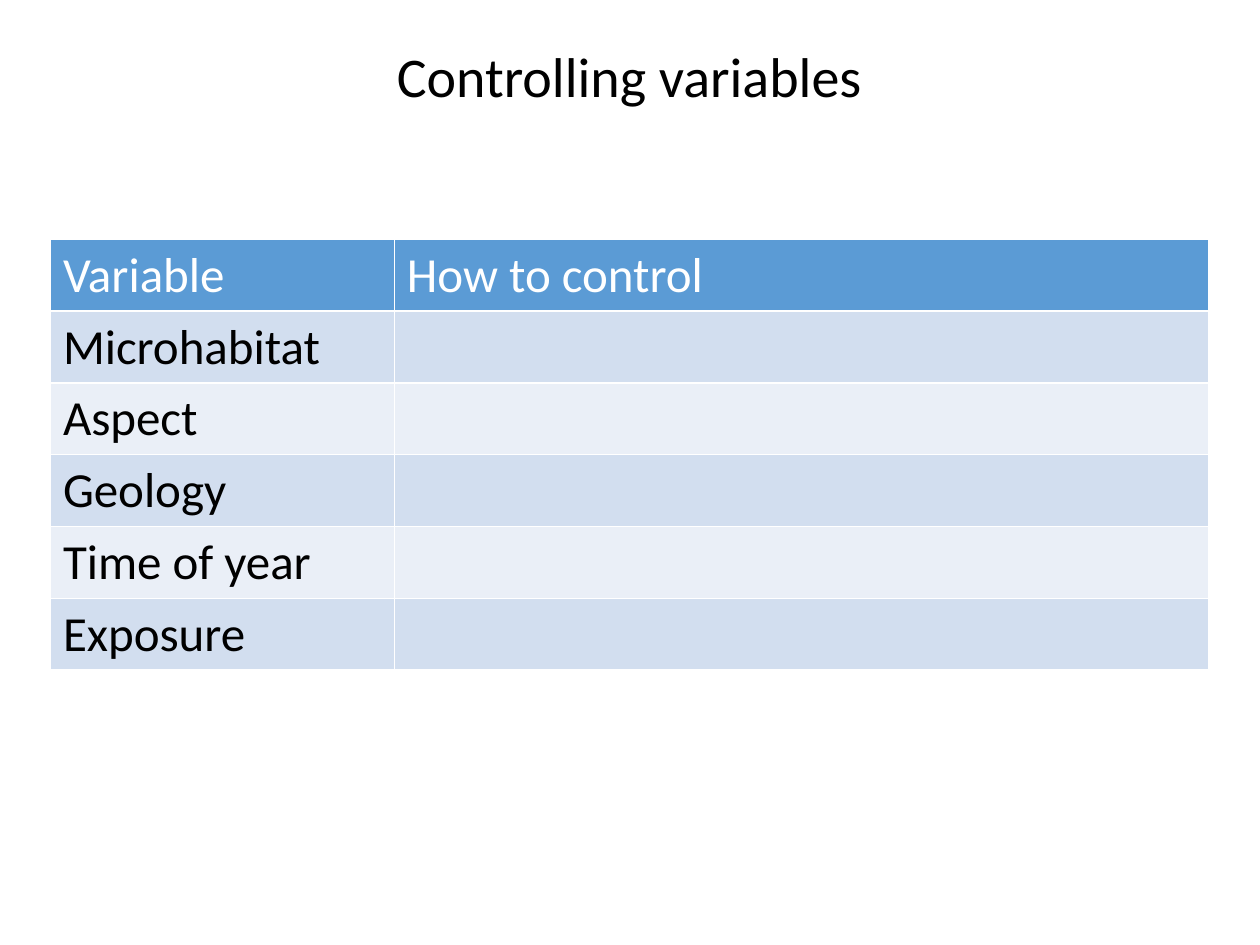
from pptx import Presentation
from pptx.dml.color import RGBColor
from pptx.enum.text import MSO_AUTO_SIZE, PP_ALIGN
from pptx.util import Inches, Pt

FONT = "Calibri"
BLACK, WHITE = "000000", "FFFFFF"
HEADER_FILL = "5B9BD5"
BAND_FILLS = ("D2DEEF", "EAEFF7")
LEFT, WIDTH = 0.4, 9.19
COLUMN_WIDTHS = (2.73, 6.46)
ROW_HEIGHT = 0.57
HEADINGS = ("Variable", "How to control")
VARIABLES = ("Microhabitat", "Aspect", "Geology", "Time of year", "Exposure")


def colour(value):
    return RGBColor.from_string(value)


def add_span(para, text, size, text_colour):
    span = para.add_run()
    span.text = text
    span.font.name = FONT
    span.font.size = Pt(size)
    span.font.bold = False
    span.font.color.rgb = colour(text_colour)


def add_title(page, text):
    box = page.shapes.add_textbox(Inches(LEFT), Inches(0.28), Inches(WIDTH), Inches(0.64))
    frame = box.text_frame
    frame.word_wrap = True
    frame.auto_size = MSO_AUTO_SIZE.SHAPE_TO_FIT_TEXT
    para = frame.paragraphs[0]
    para.alignment = PP_ALIGN.CENTER
    add_span(para, text, 32, BLACK)


def fill_cell(cell, text, fill, text_colour):
    cell.fill.solid()
    cell.fill.fore_color.rgb = colour(fill)
    if text:
        add_span(cell.text_frame.paragraphs[0], text, 28, text_colour)


def add_variable_table(page):
    """The table's own style supplies the white rules between cells."""
    rows = [HEADINGS] + [(name, "") for name in VARIABLES]
    table = page.shapes.add_table(
        len(rows), len(HEADINGS), Inches(LEFT), Inches(1.9),
        Inches(WIDTH), Inches(ROW_HEIGHT * len(rows))).table
    for column, width in zip(table.columns, COLUMN_WIDTHS):
        column.width = Inches(width)
    for index, texts in enumerate(rows):
        table.rows[index].height = Inches(ROW_HEIGHT)
        is_header = index == 0
        fill = HEADER_FILL if is_header else BAND_FILLS[(index - 1) % 2]
        for cell, text in zip(table.rows[index].cells, texts):
            fill_cell(cell, text, fill, WHITE if is_header else BLACK)


def main():
    deck = Presentation()
    deck.slide_width, deck.slide_height = Inches(10), Inches(7.5)
    page = deck.slides.add_slide(deck.slide_layouts[6])
    add_title(page, "Controlling variables")
    add_variable_table(page)
    deck.save("out.pptx")


if __name__ == "__main__":
    main()
